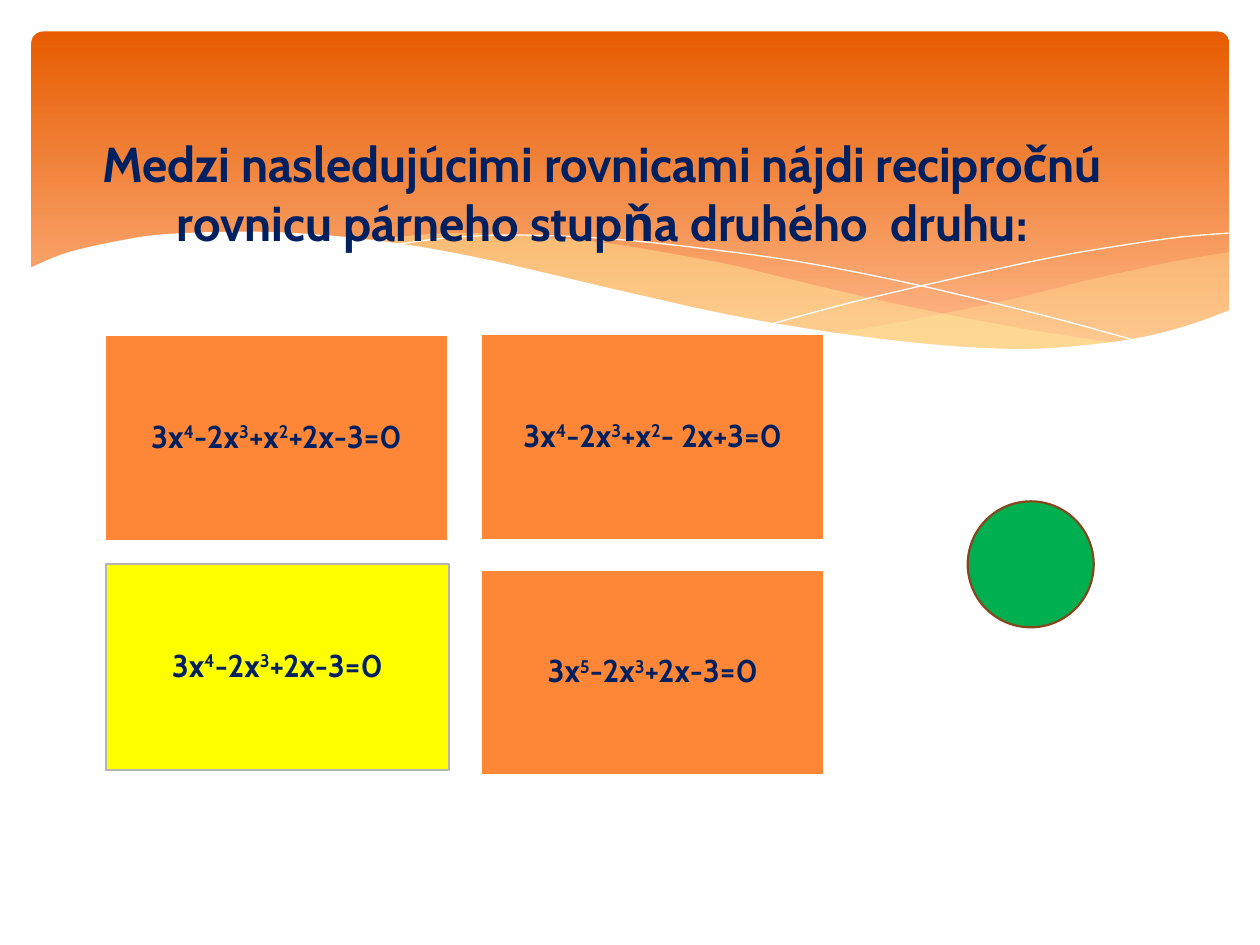
import pptx
import pptx.util
import pptx.dml.color
import pptx.enum.shapes
import pptx.enum.text
import pptx.oxml.ns
import lxml.etree

Pt = pptx.util.Pt
KIND = pptx.enum.shapes.MSO_SHAPE

# Content: ^ raises the next digit
TITLE = "Medzi nasledujúcimi rovnicami nájdi recipročnú rovnicu párneho stupňa druhého  druhu:"
CARDS = [  # text, left, top, fill, line
    ("3x^4-2x^3+x^2- 2x+3=0", 275, 191, "orange", "white"),
    ("3x^5-2x^3+2x-3=0", 275, 325.5, "orange", "white"),
    ("3x^4-2x^3+x^2+2x-3=0", 60, 191.5, "orange", "white"),
    ("3x^4-2x^3+2x-3=0", 60.5, 322.5, "yellow", "grey"),
]
CARD_W, CARD_H = 196, 117.5
FONT = "Cabin"
COLORS = {
    "navy": "002060", "orange": "FE8637", "yellow": "FFFF00",
    "white": "FFFFFF", "grey": "B4B4B4", "green": "00B050",
    "brown": "85461D", "flame": "E75C01", "peach": "FEB687",
    "cream": "FFF39D",
}

# Waves of the banner: each list is a smooth curve
RIGHT = [
    [(702.7, 144), (673, 149), (652, 153.4), (620, 160.5), (580, 170.5),
     (525, 182), (476, 191)],
    [(476, 191), (497.5, 193.7), (527, 197), (554, 199.2), (586, 200),
     (615, 198.8), (640, 195.8), (663, 191), (683, 185), (702.7, 177.8)],
]
BAND = [
    [(206, 137.5), (236, 134.6), (260, 133.2), (287, 133.9), (318, 136),
     (352, 139.7), (389.5, 146), (420.5, 152), (453, 160), (508, 172.8),
     (558, 183), (602.6, 190.8), (643, 196.5)],
    [(643, 196.5), (617, 199.4), (589, 200.2), (556.6, 199.5), (520, 197.2),
     (479, 191.5), (432.7, 183.6), (381.6, 172.8), (323, 159.8), (291, 152),
     (260.6, 146), (232.6, 141), (206, 137.5)],
]
FALL = [
    [(222.5, 140.4), (247.7, 136.8), (278.6, 134.6), (311.8, 134.6),
     (352, 136.8), (400, 141.8), (458, 149.8), (523.4, 162.7),
     (598, 180.7), (653, 195.8)],
]
RISE = [
    [(441.4, 185), (483.8, 173.5), (538.6, 160.6), (602, 146.9),
     (644.4, 139.7), (675, 135.4), (702, 133.2)],
]
PAPER = [
    [(703.4, 177), (677, 186.5), (647, 193.7), (612, 198), (582.5, 199.4),
     (548, 198), (509.8, 194.4), (466.6, 188.6), (417, 180), (362, 167.8),
     (322, 158.4), (281.5, 149), (244.8, 141.8), (210, 136.8), (180, 133.9),
     (152, 132.5), (127.4, 132.5), (105, 133.2), (85.7, 134.6),
     (68.4, 137.5), (48, 141.8), (33, 146.2), (16.6, 153.4)],
    [(16.6, 237), (703.4, 237)],
]
WAVES = [  # curves, fill, opacity in percent, line
    (RIGHT, "cream", 29, None),
    (BAND, "cream", 40, None),
    (FALL, None, 100, "white"),
    (RISE, None, 100, "white"),
    (PAPER, "white", 100, None),
]


def tint(name):
    return pptx.dml.color.RGBColor.from_string(COLORS[name])


def paint(shape, fill=None, line=None, width=1.25):
    shape.shadow.inherit = False
    if fill:
        shape.fill.solid()
        shape.fill.fore_color.rgb = tint(fill)
    else:
        shape.fill.background()
    if line:
        shape.line.color.rgb = tint(line)
        shape.line.width = Pt(width)
    else:
        shape.line.fill.background()


def write(shape, text, size=18, color="navy", inset=None, space=None):
    frame = shape.text_frame
    frame.word_wrap = True
    frame.auto_size = pptx.enum.text.MSO_AUTO_SIZE.NONE
    frame.vertical_anchor = pptx.enum.text.MSO_ANCHOR.MIDDLE
    if inset is not None:
        frame.margin_left = frame.margin_right = Pt(inset)
        frame.margin_top = frame.margin_bottom = Pt(inset)
    para = frame.paragraphs[0]
    para.alignment = pptx.enum.text.PP_ALIGN.CENTER
    if space:
        para.line_spacing = space
    head, *tail = text.split("^")
    parts = [(head, False)]
    for bit in tail:
        parts += [(bit[0], True), (bit[1:], False)]
    for part, raised in parts:
        run = para.add_run()
        run.text = part
        run.font.name, run.font.size, run.font.bold = FONT, Pt(size), True
        run.font.color.rgb = tint(color)
        if raised:
            run.font._element.set("baseline", "30000")


def smooth(knots, steps=5):
    """Catmull-Rom curve through the knots."""
    pad = [knots[0], *knots, knots[-1]]
    dots = [knots[0]]
    for a, b, c, d in zip(pad, pad[1:], pad[2:], pad[3:]):
        for step in range(1, steps + 1):
            t = step / steps
            dots.append(tuple(
                b[i] + t / 2 * (c[i] - a[i]
                + t * (2 * a[i] - 5 * b[i] + 4 * c[i] - d[i])
                + t * t * (3 * b[i] - a[i] - 3 * c[i] + d[i]))
                for i in (0, 1)))
    return dots


def wave(shapes, curves, fill, alpha, line):
    dots = [(Pt(x), Pt(y)) for knots in curves for x, y in smooth(knots)]
    pen = shapes.build_freeform(*dots[0])
    pen.add_line_segments(dots[1:], close=fill is not None)
    shape = pen.convert_to_shape()
    paint(shape, fill, line, width=0)
    if alpha < 100:
        tone = shape._element.spPr.find(".//" + pptx.oxml.ns.qn("a:srgbClr"))
        lxml.etree.SubElement(tone, pptx.oxml.ns.qn("a:alpha"), val=str(alpha * 1000))


def main():
    deck = pptx.Presentation()
    deck.slide_width, deck.slide_height = Pt(720), Pt(540)
    slide = deck.slides.add_slide(deck.slide_layouts[5])
    shapes = slide.shapes

    # Banner
    banner = shapes.add_shape(KIND.ROUNDED_RECTANGLE, Pt(18), Pt(18), Pt(684.5), Pt(194.5))
    banner.adjustments[0] = 0.034
    paint(banner)
    banner.fill.gradient()
    banner.fill.gradient_angle = 270
    for stop, name, place in zip(banner.fill.gradient_stops, ("flame", "peach"), (0, 0.9)):
        stop.color.rgb = tint(name)
        stop.position = place
    for item in WAVES:
        wave(shapes, *item)

    # Title, in front of the banner
    title = shapes.title
    title.left, title.top, title.width, title.height = Pt(20), Pt(60.5), Pt(648), Pt(98.5)
    write(title, TITLE, size=28)
    shapes._spTree.append(title._element)

    # Equation cards
    for text, left, top, fill, line in CARDS:
        card = shapes.add_shape(KIND.RECTANGLE, Pt(left), Pt(top), Pt(CARD_W), Pt(CARD_H))
        paint(card, fill, line)
        write(card, text, inset=5, space=0.9)

    # Green button
    dot = shapes.add_shape(KIND.OVAL, Pt(553), Pt(286.5), Pt(72), Pt(72))
    paint(dot, "green", "brown")

    deck.save("out.pptx")


if __name__ == "__main__":
    main()
